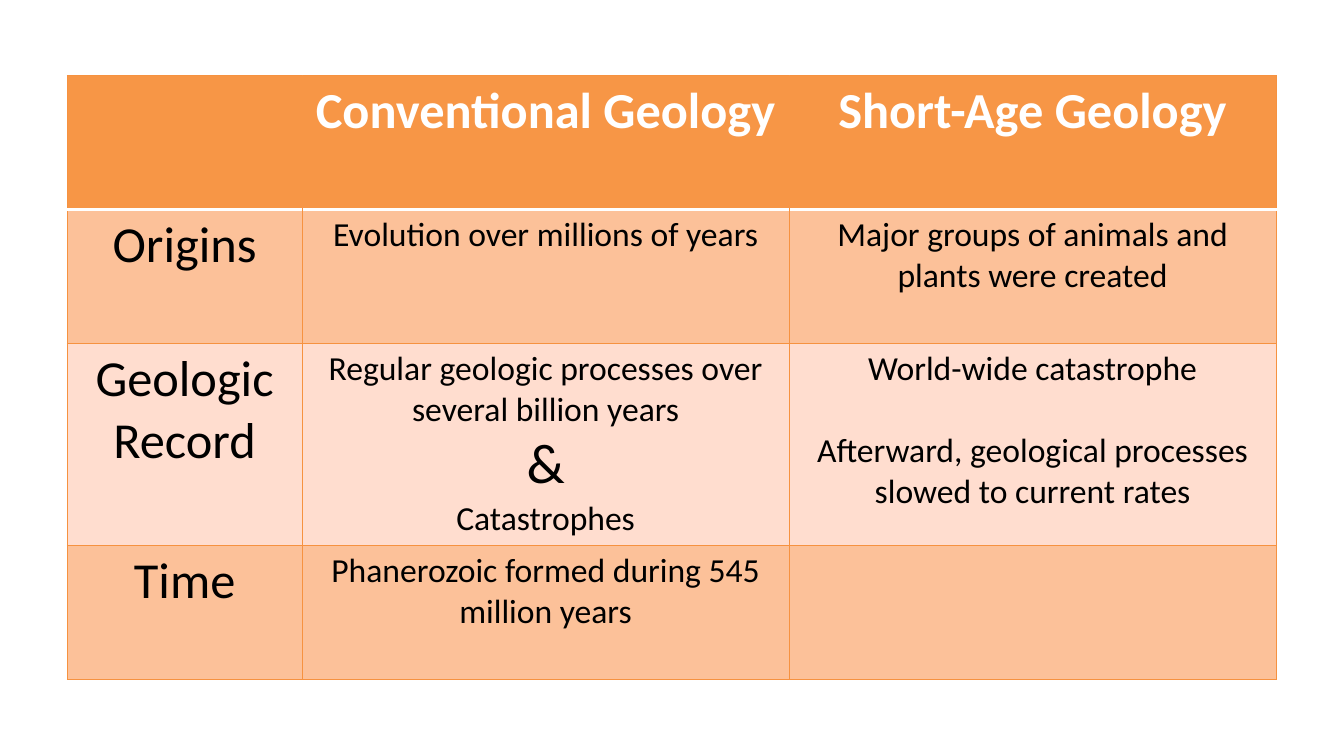
import pptx
import pptx.util
import pptx.enum.text
import pptx.dml.color
import pptx.oxml
import pptx.oxml.ns

HEX = {"head": "F79646", "band": "FCC199", "pale": "FFDDCF",
       "line": "F69240", "white": "FFFFFF", "black": "000000"}
BIG, AMP, BODY = 36, 40, 24

deck = pptx.Presentation()
deck.slide_width = pptx.util.Inches(13.33)
deck.slide_height = pptx.util.Inches(7.5)
slide = deck.slides.add_slide(deck.slide_layouts[6])

# Each cell lists its paragraphs as (text, size, space before)
rows = [
    ("head", 1.33, [[],
                    [("Conventional Geology", BIG, 0)],
                    [("Short-Age Geology", BIG, 0)]]),
    ("band", 1.33, [[("Origins", BIG, 0)],
                    [("Evolution over millions of years", BODY, 0)],
                    [("Major groups of animals and plants were created", BODY, 0)]]),
    ("pale", 2, [[("Geologic", BIG, 0), ("Record", BIG, 0)],
                 [("Regular geologic processes over several billion years", BODY, 0),
                  ("&", AMP, 0), ("Catastrophes", BODY, 0)],
                 [("World-wide catastrophe", BODY, 0),
                  ("Afterward, geological processes slowed to current rates", BODY, 29)]]),
    ("band", 1.33, [[("Time", BIG, 0)],
                    [("Phanerozoic formed during 545 million years", BODY, 0)],
                    []]),
]
widths = [2.33, 4.83, 4.83]

# Table grid
left, top = deck.slide_width // 20, deck.slide_height // 10
table = slide.shapes.add_table(
    len(rows), len(widths), left, top, pptx.util.Inches(sum(widths)),
    pptx.util.Inches(sum(row[1] for row in rows))).table
for key, val in {"first_row": False, "horz_banding": False}.items():
    setattr(table, key, val)
for col, width in zip(table.columns, widths):
    col.width = pptx.util.Inches(width)


def edge(cell, side, tone, size):
    """Draw one border of a cell."""
    cell._tc.get_or_add_tcPr().append(pptx.oxml.parse_xml(
        f'<a:ln{side} {pptx.oxml.ns.nsdecls("a")} w="{pptx.util.Pt(size)}">'
        f'<a:solidFill><a:srgbClr val="{HEX[tone]}"/></a:solidFill></a:ln{side}>'))


for r, (tone, height, cells) in enumerate(rows):
    table.rows[r].height = pptx.util.Inches(height)
    head = r == 0
    for c, paras in enumerate(cells):
        cell = table.cell(r, c)

        # Borders: a white rule parts the header from the body
        for side in "LRTB":
            rule = (head and side == "B") or (r == 1 and side == "T")
            inner = head and (side == "L" and c > 0 or side == "R" and c < 2)
            edge(cell, side, "white" if rule else "head" if inner else "line",
                 2 if rule else 0.75)
        cell.fill.solid()
        cell.fill.fore_color.rgb = pptx.dml.color.RGBColor.from_string(HEX[tone])

        # Text
        frame = cell.text_frame
        for i, (text, size, gap) in enumerate(paras):
            para = frame.add_paragraph() if i else frame.paragraphs[0]
            para.alignment = pptx.enum.text.PP_ALIGN.CENTER
            para.space_before = pptx.util.Pt(gap)
            run = para.add_run()
            run.text = text
            style = {"name": "Calibri", "size": pptx.util.Pt(size), "bold": head}
            for key, val in style.items():
                setattr(run.font, key, val)
            run.font.color.rgb = pptx.dml.color.RGBColor.from_string(
                HEX["white" if head else "black"])

deck.save("out.pptx")
